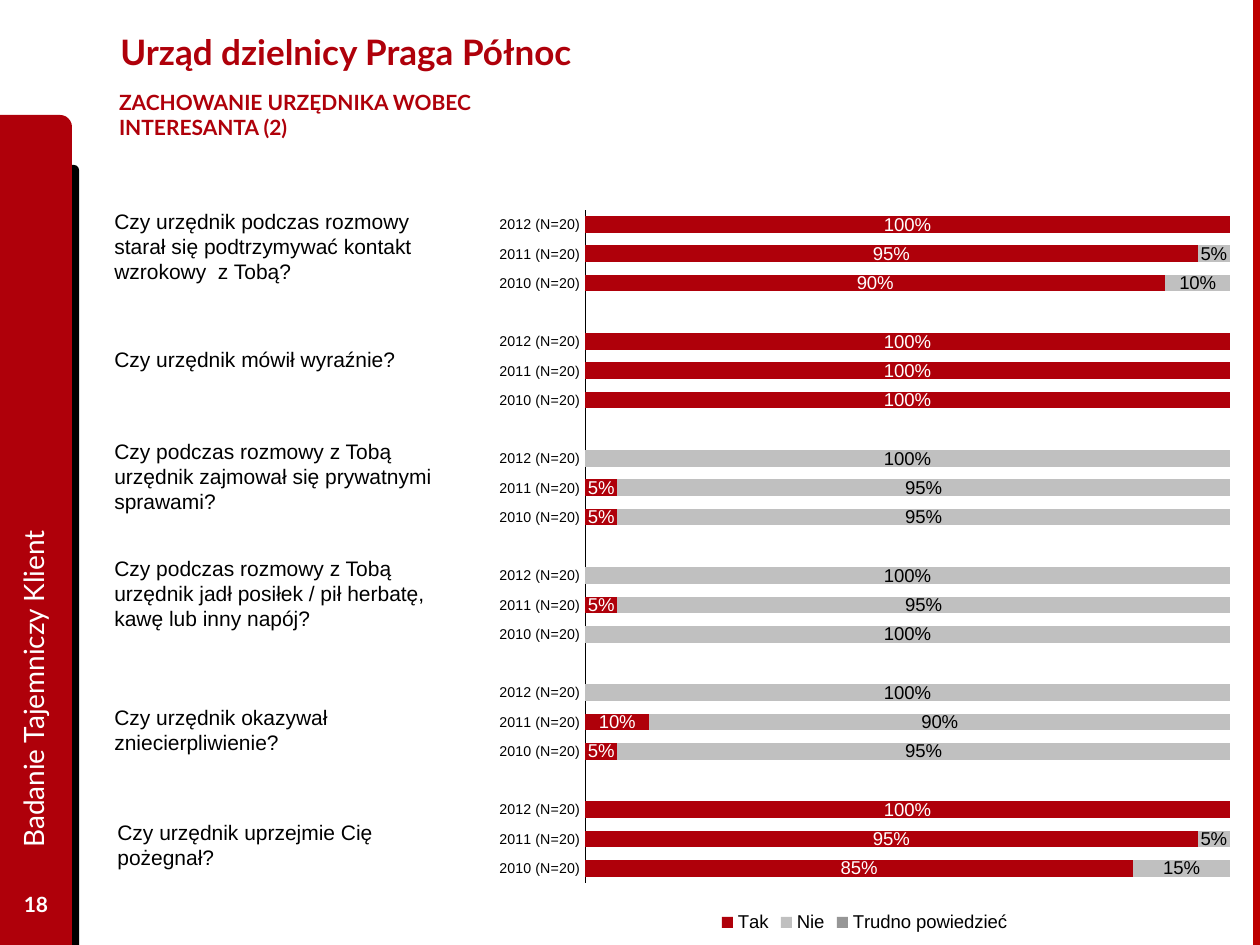
from lxml import etree
from pptx import Presentation
from pptx.chart.data import CategoryChartData
from pptx.dml.color import RGBColor
from pptx.enum.chart import XL_CHART_TYPE, XL_LEGEND_POSITION, XL_TICK_LABEL_POSITION, XL_TICK_MARK
from pptx.enum.shapes import MSO_SHAPE
from pptx.enum.text import MSO_ANCHOR, MSO_AUTO_SIZE, PP_ALIGN
from pptx.oxml.ns import qn
from pptx.util import Emu, Pt

STACKED = XL_CHART_TYPE.BAR_STACKED
BOTTOM = XL_LEGEND_POSITION.BOTTOM
BARE = XL_TICK_LABEL_POSITION.NONE
NO_TICK = XL_TICK_MARK.NONE
ROUND, RECT = MSO_SHAPE.ROUND_1_RECTANGLE, MSO_SHAPE.RECTANGLE
TOP, MIDDLE = MSO_ANCHOR.TOP, MSO_ANCHOR.MIDDLE
GROW = MSO_AUTO_SIZE.SHAPE_TO_FIT_TEXT
LEFT, CENTER = PP_ALIGN.LEFT, PP_ALIGN.CENTER

PX = 914400 / 126
RED, BLACK, WHITE, GRAY = "AF000A", "000000", "FFFFFF", "C0C0C0"

PANELS = [
    (ROUND, (49, 165, 30, 780), BLACK),
    (ROUND, (0, 115, 72, 830), RED),
    (RECT, (1253, 0, 7, 945), "BD0000"),
]
YEARS = ["2012 (N=20)", "2011 (N=20)", "2010 (N=20)"]
ITEMS = [
    ("Czy urzędnik podczas rozmowy starał się podtrzymywać kontakt wzrokowy  z Tobą?",
     (102, 202, 343, 88), (1, 0.95, 0.9)),
    ("Czy urzędnik mówił wyraźnie?",
     (102, 340, 343, 38), (1, 1, 1)),
    ("Czy podczas rozmowy z Tobą urzędnik zajmował się prywatnymi sprawami?",
     (102, 432, 343, 88), (0, 0.05, 0.05)),
    ("Czy podczas rozmowy z Tobą urzędnik jadł posiłek / pił herbatę, kawę lub inny napój?",
     (102, 549, 343, 88), (0, 0.05, 0)),
    ("Czy urzędnik okazywał zniecierpliwienie?",
     (102, 698, 343, 63), (0, 0.1, 0.05)),
    ("Czy urzędnik uprzejmie Cię pożegnał?",
     (105, 813, 343, 63), (1, 0.95, 0.85)),
]
SERIES = [("Tak", RED, WHITE), ("Nie", GRAY, BLACK), ("Trudno powiedzieć", "969696", None)]
CHART = (484, 195, 761, 743)
PLOT = (585, 210, 645, 673)


def px(box):
    return [Emu(round(n * PX)) for n in box]


def rgb(code):
    return RGBColor.from_string(code)


def style(font, size, color, face="Arial", bold=False):
    font.size, font.name, font.bold = Pt(size), face, bold
    font.color.rgb = rgb(color)


def write(text, box, size=12, color=BLACK, face="Arial", bold=False, align=LEFT,
          anchor=TOP, turn=0, wrap=True, side=None, fit=None):
    shape = slide.shapes.add_textbox(*px(box))
    shape.rotation = turn
    frame = shape.text_frame
    frame.word_wrap, frame.vertical_anchor = wrap, anchor
    if fit is not None:
        frame.auto_size = fit
    if side is not None:
        frame.margin_left = frame.margin_right = Emu(round(side * PX))
    para = frame.paragraphs[0]
    para.alignment = align
    run = para.add_run()
    run.text = text
    style(run.font, size, color, face, bold)


def place(chart):
    area = chart._chartSpace.chart.plotArea
    old = area.find(qn("c:layout"))
    if old is not None:
        area.remove(old)
    layout = etree.Element(qn("c:layout"))
    area.insert(0, layout)
    manual = etree.SubElement(layout, qn("c:manualLayout"))
    left, top, wide, high = CHART
    x, y, w, h = PLOT
    parts = [("layoutTarget", "inner"), ("xMode", "edge"), ("yMode", "edge"),
             ("x", (x - left) / wide), ("y", (y - top) / high),
             ("w", w / wide), ("h", h / high)]
    for tag, val in parts:
        etree.SubElement(manual, qn("c:" + tag)).set("val", str(val))


def draw():
    cats, yes, no = [], [], []
    for i, (_, _, vals) in enumerate(ITEMS):
        if i:
            cats.append("")
            yes.append(None)
            no.append(None)
        cats += YEARS
        yes += [v or None for v in vals]
        no += [round(1 - v, 2) or None for v in vals]
    data = CategoryChartData(number_format="0%")
    data.categories = cats
    for (name, _, _), vals in zip(SERIES, (yes, no, [None] * len(cats))):
        data.add_series(name, vals)
    chart = slide.shapes.add_chart(STACKED, *px(CHART), data).chart
    style(chart.font, 10.6, BLACK)
    chart.has_title = False
    chart.has_legend = True
    chart.legend.position = BOTTOM
    chart.legend.include_in_layout = False
    style(chart.legend.font, 10.6, BLACK)

    plot = chart.plots[0]
    plot.gap_width, plot.overlap, plot.vary_by_categories = 75, 100, False
    for line, (_, fill, ink) in zip(plot.series, SERIES):
        line.format.fill.solid()
        line.format.fill.fore_color.rgb = rgb(fill)
        line.invert_if_negative = False
        if ink:
            tags = line.data_labels
            tags.show_value = True
            tags.number_format, tags.number_format_is_linked = "0%", False
            style(tags.font, 10.6, ink)

    axis = chart.category_axis
    axis.reverse_order = True
    axis.format.line.color.rgb = rgb(BLACK)
    axis.format.line.width = Pt(0.23)
    style(axis.tick_labels.font, 8.1, BLACK)
    scale = chart.value_axis
    scale.minimum_scale, scale.maximum_scale, scale.major_unit = 0, 1, 0.2
    scale.tick_label_position = BARE
    scale.format.line.fill.background()
    for each in (axis, scale):
        each.major_tick_mark = each.minor_tick_mark = NO_TICK
        each.has_major_gridlines = False
    place(chart)


deck = Presentation()
deck.slide_width, deck.slide_height = px((1260, 945))
slide = deck.slides.add_slide(deck.slide_layouts[6])

for kind, box, color in PANELS:
    panel = slide.shapes.add_shape(kind, *px(box))
    panel.shadow.inherit = False
    panel.fill.solid()
    panel.fill.fore_color.rgb = rgb(color)
    panel.line.fill.background()

write("Urząd dzielnicy Praga Północ", (108, 6, 979, 91), size=20, color=RED,
      face="Lato", bold=True, anchor=MIDDLE)
write("Badanie Tajemniczy Klient", (-330, 465, 726, 64), size=16, color=WHITE,
      face="Lato", anchor=MIDDLE, turn=270)
write("18", (0, 879, 72, 50), color=WHITE, face="Lato", bold=True,
      align=CENTER, anchor=MIDDLE)
write("ZACHOWANIE URZĘDNIKA WOBEC INTERESANTA (2)", (94, 83, 485, 42), color=RED,
      face="Lato", bold=True, wrap=False, side=25)
draw()
for text, box, _ in ITEMS:
    write(text, box, fit=GROW)

deck.save("out.pptx")
